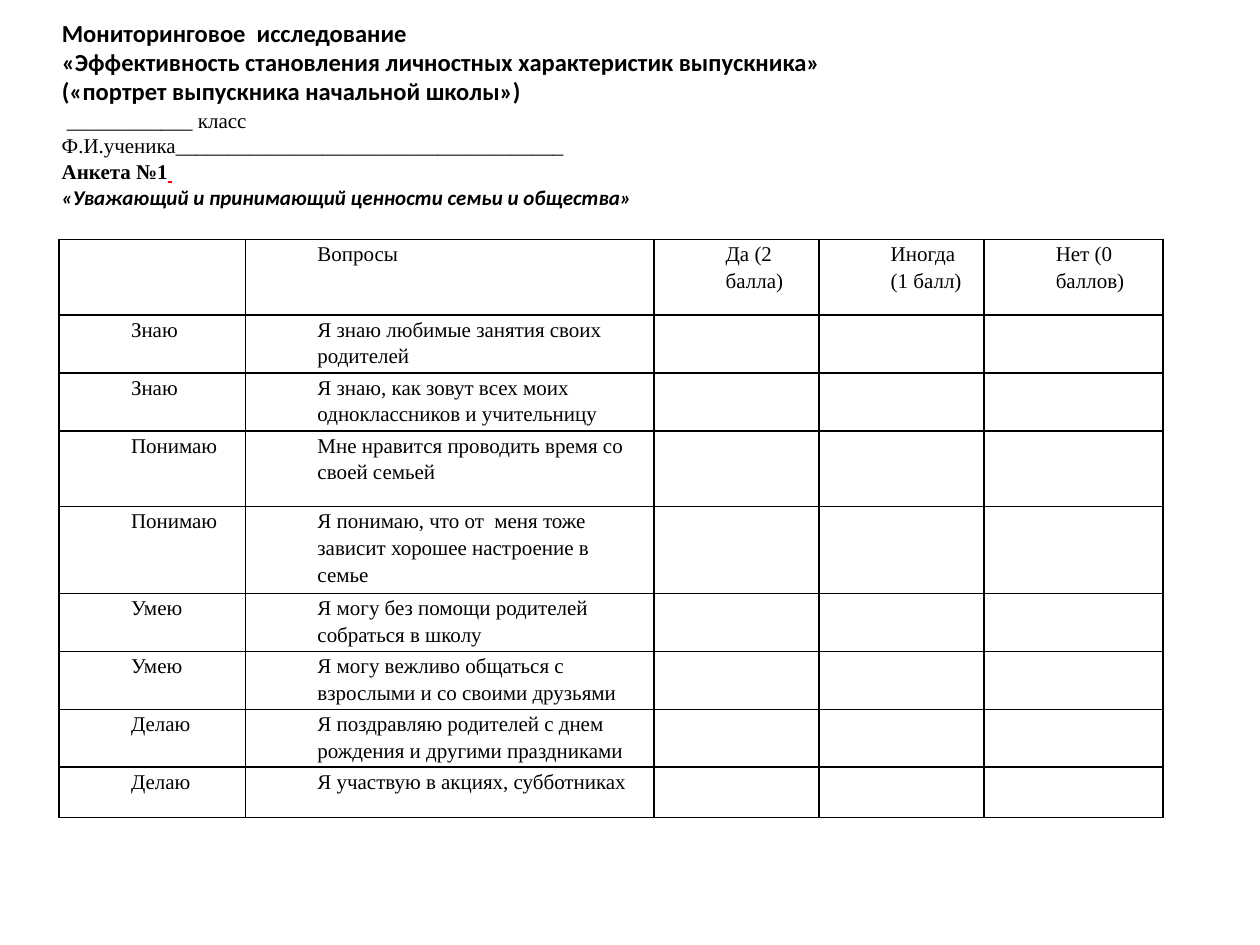
from dataclasses import dataclass
from lxml import etree
from pptx import Presentation
from pptx.dml.color import RGBColor
from pptx.enum.text import MSO_ANCHOR, MSO_AUTO_SIZE, PP_ALIGN
from pptx.oxml.ns import qn
from pptx.util import Inches, Pt

TOP = MSO_ANCHOR.TOP
LEFT = PP_ALIGN.LEFT
FIXED = MSO_AUTO_SIZE.NONE


@dataclass
class Theme:
    ink: RGBColor = RGBColor(0, 0, 0)
    mark: RGBColor = RGBColor(255, 0, 0)
    sans: str = "Calibri"
    serif: str = "Times New Roman"
    head: int = 14
    body: int = 12


theme = Theme()


def style(font, name, size, bold=False, italic=False):
    font.name, font.size = name, Pt(size)
    font.bold, font.italic = bold, italic
    font.color.rgb = theme.ink


def border(cell):
    """Draw a thin solid line on all four sides of the cell."""
    props = cell._tc.get_or_add_tcPr()
    for pos, side in enumerate(("lnL", "lnR", "lnT", "lnB")):
        line = etree.Element(qn("a:" + side), w=str(Pt(1)))
        fill = etree.SubElement(line, qn("a:solidFill"))
        etree.SubElement(fill, qn("a:srgbClr"), val=str(theme.ink))
        props.insert(pos, line)


prs = Presentation()
prs.slide_width, prs.slide_height = Inches(10), Inches(7.5)
slide = prs.slides.add_slide(prs.slide_layouts[5])

# Title and form fields
title = slide.shapes.title
title.left, title.top = Inches(0.49), Inches(0.14)
title.width, title.height = Inches(9), Inches(0.71)
title.text_frame.text = (
    "Мониторинговое  исследование\n"
    "«Эффективность становления личностных характеристик выпускника»\n"
    "(«портрет выпускника начальной школы»)"
)
form = slide.shapes.add_textbox(Inches(0.49), Inches(0.85), Inches(9), Inches(0.81))
form.text_frame.text = (
    " ____________ класс\n"
    "Ф.И.ученика_____________________________________\n"
    "Анкета №1\n"
    "«Уважающий и принимающий ценности семьи и общества»"
)
for shape in (title, form):
    frame = shape.text_frame
    frame.word_wrap, frame.auto_size = True, FIXED
    frame.vertical_anchor = TOP
    frame.margin_left = frame.margin_right = 0
    frame.margin_top = frame.margin_bottom = 0
    for para in frame.paragraphs:
        para.alignment = LEFT

for para in title.text_frame.paragraphs:
    style(para.runs[0].font, theme.sans, theme.head, bold=True)

looks = [
    (theme.serif, False, False),
    (theme.serif, False, False),
    (theme.serif, True, False),
    (theme.sans, True, True),
]
for para, (name, bold, italic) in zip(form.text_frame.paragraphs, looks):
    para.line_spacing = Pt(14.6)
    style(para.runs[0].font, name, theme.body, bold, italic)

blank = form.text_frame.paragraphs[2].add_run()
blank.text = " "
style(blank.font, theme.sans, theme.body, bold=True)
blank.font.color.rgb = theme.mark
blank.font.underline = True

# Questionnaire
rows = [
    (0.6, "", "Вопросы", "Да (2 балла)", "Иногда (1 балл)", "Нет (0 баллов)"),
    (0.46, "Знаю", "Я знаю любимые занятия своих родителей"),
    (0.46, "Знаю", "Я знаю, как зовут всех моих одноклассников и учительницу"),
    (0.6, "Понимаю", "Мне нравится проводить время со своей семьей"),
    (0.69, "Понимаю", "Я понимаю, что от  меня тоже зависит хорошее настроение в семье"),
    (0.46, "Умею", "Я могу без помощи родителей собраться в школу"),
    (0.46, "Умею", "Я могу вежливо общаться с взрослыми и со своими друзьями"),
    (0.46, "Делаю", "Я поздравляю родителей с днем рождения и другими праздниками"),
    (0.4, "Делаю", "Я участвую в акциях, субботниках"),
]
widths = [1.48, 3.24, 1.31, 1.31, 1.42]
high = sum(row[0] for row in rows)
table = slide.shapes.add_table(
    len(rows), len(widths), Inches(0.47), Inches(1.9), Inches(sum(widths)), Inches(high)
).table
table.horz_banding = False
for col, width in zip(table.columns, widths):
    col.width = Inches(width)

for line, (height, *texts) in zip(table.rows, rows):
    line.height = Inches(height)
    for cell in line.cells:
        cell.fill.background()
        border(cell)
        cell.margin_left = cell.margin_right = Inches(0.07)
        cell.margin_top = cell.margin_bottom = 0
        cell.vertical_anchor = TOP
        style(cell.text_frame.paragraphs[0].font, theme.serif, theme.body)
    for cell, text in zip(line.cells, texts):
        if text:
            cell.text_frame.text = text
            para = cell.text_frame.paragraphs[0]
            para.line_spacing = 1.15
            para._p.get_or_add_pPr().set("marL", str(Inches(0.5)))
            style(para.runs[0].font, theme.serif, theme.body)

prs.save("out.pptx")
